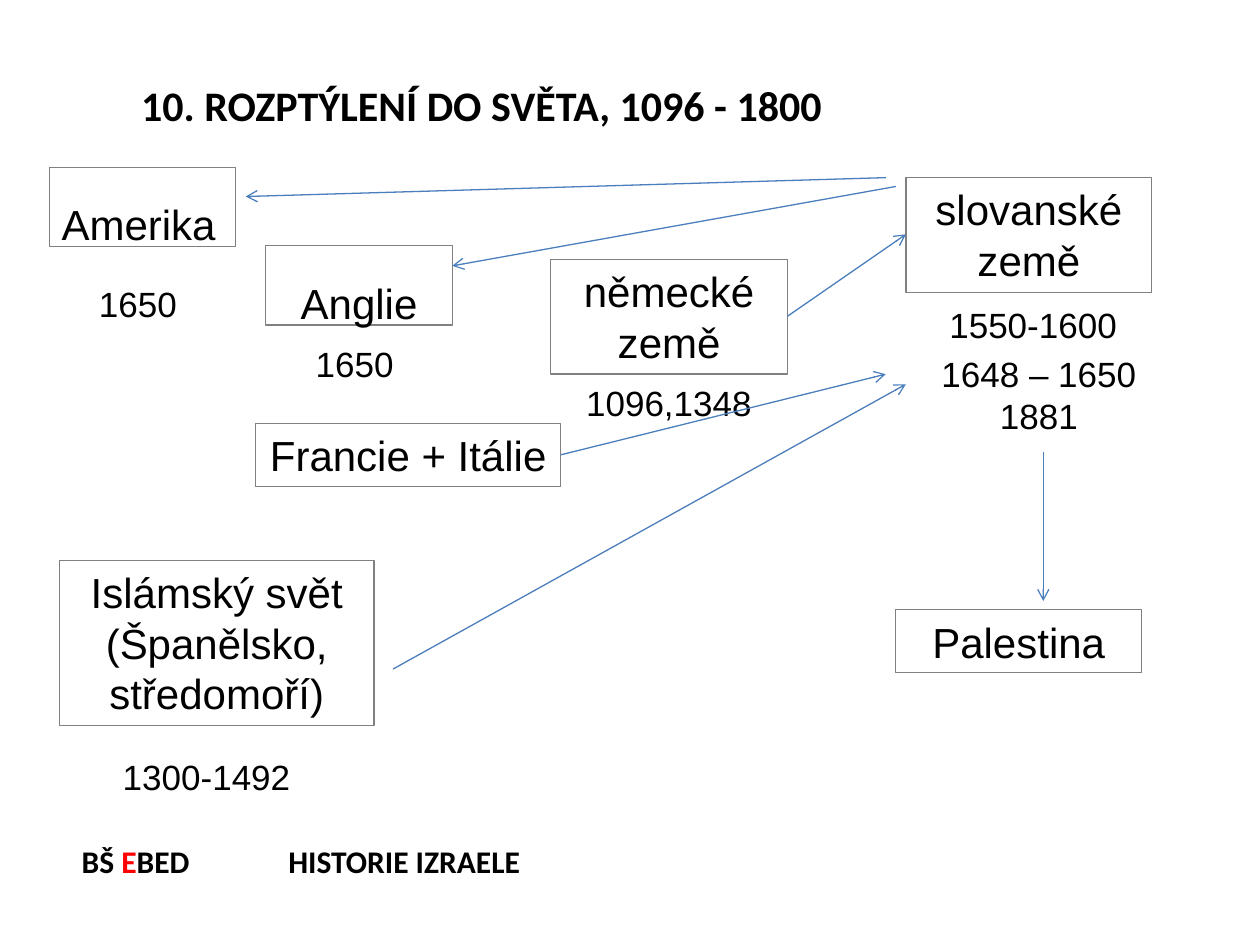
from dataclasses import dataclass
from lxml.etree import SubElement
from pptx import Presentation
from pptx.dml.color import RGBColor
from pptx.enum.shapes import MSO_CONNECTOR, MSO_SHAPE
from pptx.enum.text import MSO_ANCHOR, MSO_AUTO_SIZE, PP_ALIGN
from pptx.oxml.ns import qn
from pptx.util import Inches, Pt


def color(code):
    return RGBColor.from_string(code)


@dataclass
class Deck:
    slide: object
    ink: str = "000000"
    edge: str = "808080"
    arrow: str = "4B7EBC"
    accent: str = "FF0000"
    body: str = "Arial"
    head: str = "Calibri"
    thin: float = 0.75

    def style(self, para, size, align=PP_ALIGN.CENTER, face=None, bold=False, gap=1):
        para.alignment = align
        para.line_spacing = gap
        font = para.font
        font.name, font.size, font.bold = face or self.body, Pt(size), bold
        font.color.rgb = color(self.ink)

    def frame(self, shape):
        frame = shape.text_frame
        frame.word_wrap = True
        frame.auto_size = MSO_AUTO_SIZE.NONE
        frame.vertical_anchor = MSO_ANCHOR.TOP
        return frame

    def title(self, text, *area):
        shape = self.slide.shapes.title
        shape.left, shape.top, shape.width, shape.height = map(Inches, area)
        para = self.frame(shape).paragraphs[0]
        para.text = text
        self.style(para, 24, PP_ALIGN.LEFT, self.head, True)

    def footer(self, parts, stop, *area):
        shape = self.slide.shapes.add_textbox(*map(Inches, area))
        para = self.frame(shape).paragraphs[0]
        self.style(para, 18, PP_ALIGN.LEFT, self.head, True)
        tabs = SubElement(para._p.get_or_add_pPr(), qn("a:tabLst"))
        para._p.pPr.find(qn("a:defRPr")).addprevious(tabs)
        SubElement(tabs, qn("a:tab"), pos=str(Inches(stop)), algn="l")
        for text, code in parts:
            run = para.add_run()
            run.text = text
            run.font.color.rgb = color(code)

    def box(self, text, *area, align=PP_ALIGN.CENTER, gap=1):
        shape = self.slide.shapes.add_shape(MSO_SHAPE.RECTANGLE, *map(Inches, area))
        shape.shadow.inherit = False
        shape.fill.background()
        shape.line.color.rgb = color(self.edge)
        shape.line.width = Pt(self.thin)
        para = self.frame(shape).paragraphs[0]
        para.text = text
        self.style(para, 24, align, gap=gap)

    def years(self, lines, *area):
        shape = self.slide.shapes.add_textbox(*map(Inches, area))
        frame = self.frame(shape)
        frame.text = "\n".join(lines)
        for index, para in enumerate(frame.paragraphs):
            self.style(para, 20, gap=1 if index else 1.5)

    def link(self, *ends):
        line = self.slide.shapes.add_connector(MSO_CONNECTOR.STRAIGHT, *map(Inches, ends))
        line.line.color.rgb = color(self.arrow)
        line.line.width = Pt(self.thin)
        SubElement(line.line._get_or_add_ln(), qn("a:tailEnd"), type="arrow")
        SubElement(line._element.spPr, qn("a:effectLst"))


def main():
    show = Presentation()
    show.slide_width, show.slide_height = Inches(10), Inches(7.5)
    deck = Deck(show.slides.add_slide(show.slide_layouts[5]))

    deck.title("10. ROZPTÝLENÍ DO SVĚTA, 1096 - 1800", 1.02, 0.58, 7.27, 0.5)
    parts = [("BŠ", deck.ink), (" E", deck.accent), ("BED\tHISTORIE IZRAELE", deck.ink)]
    deck.footer(parts, 1.64, 0.55, 6.63, 7.27, 0.4)

    deck.box("Anglie", 2.11, 1.95, 1.48, 0.63, gap=1.5)
    deck.box("Amerika", 0.39, 1.33, 1.48, 0.63, align=PP_ALIGN.LEFT, gap=1.5)
    for text, *area in [
        ("Islámský svět (Španělsko, středomoří)", 0.47, 4.45, 2.5, 1.31),
        ("slovanské země", 7.19, 1.41, 1.95, 0.91),
        ("německé země", 4.37, 2.06, 1.88, 0.91),
        ("Francie + Itálie", 2.03, 3.36, 2.42, 0.5),
        ("Palestina", 7.11, 4.84, 1.95, 0.5),
    ]:
        deck.box(text, *area)

    for lines, *area in [
        (["1300-1492"], 0.86, 5.78, 1.56, 0.61),
        (["1096,1348"], 4.53, 2.81, 1.56, 0.54),
        (["1550-1600"], 7.42, 2.19, 1.56, 0.54),
        (["1648 – 1650", "1881"], 7.27, 2.58, 1.95, 0.94),
        (["1650"], 2.27, 2.5, 1.09, 0.61),
        (["1650"], 0.55, 2.03, 1.09, 0.61),
    ]:
        deck.years(lines, *area)

    for ends in [
        (3.12, 5.31, 7.19, 3.05),
        (6.25, 2.51, 7.19, 1.86),
        (4.45, 3.61, 7.03, 2.97),
        (7.11, 1.48, 3.59, 2.11),
        (7.03, 1.41, 1.95, 1.56),
        (8.28, 3.59, 8.28, 4.77),
    ]:
        deck.link(*ends)

    show.save("out.pptx")


if __name__ == "__main__":
    main()
